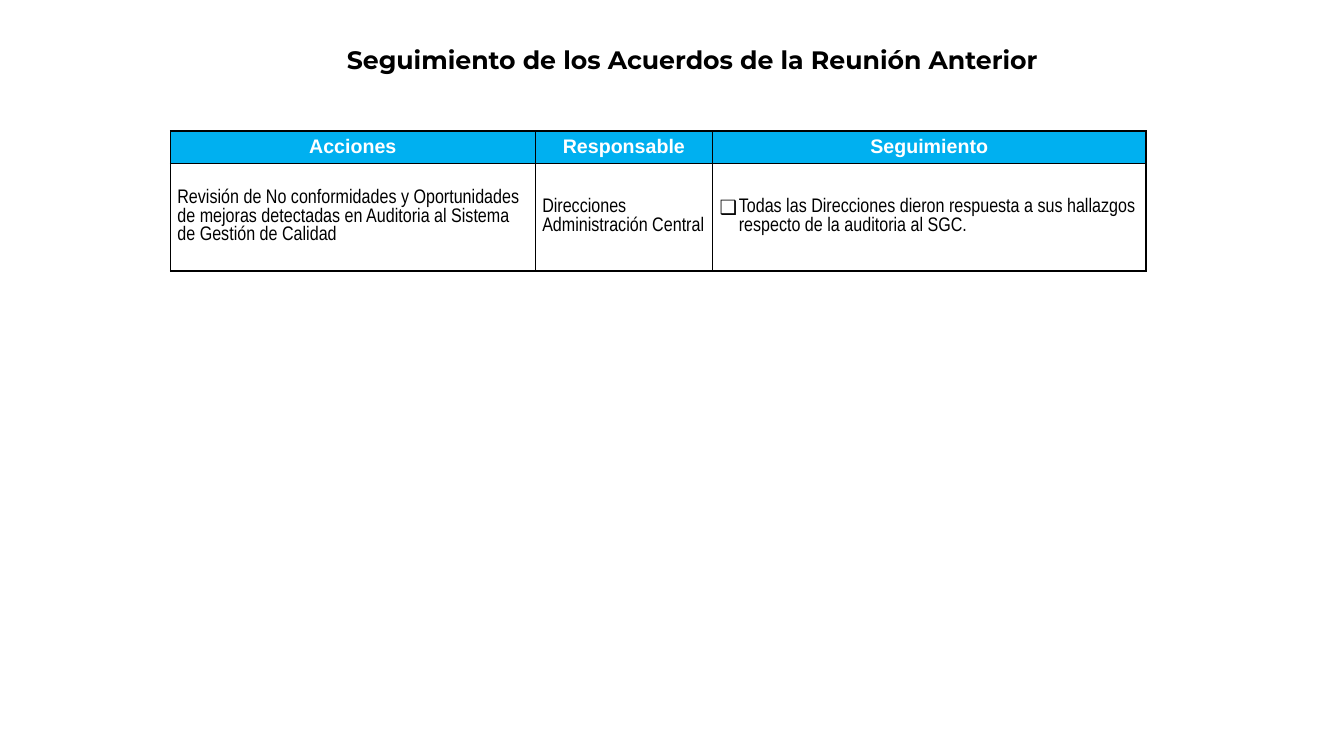
from lxml.etree import SubElement
from pptx import Presentation
from pptx.dml.color import RGBColor
from pptx.enum.text import MSO_ANCHOR, PP_ALIGN
from pptx.oxml.ns import qn
from pptx.util import Pt

COLORS = {"text": "000000", "line": "000000", "head": "00B0F0",
          "white": "FFFFFF"}
HEADS = ["Acciones", "Responsable", "Seguimiento"]
ROWS = [[
    "Revisión de No conformidades y Oportunidades de mejoras detectadas "
    "en Auditoria al Sistema de Gestión de Calidad",
    "Direcciones Administración Central",
    "Todas las Direcciones dieron respuesta a sus hallazgos respecto "
    "de la auditoria al SGC.",
]]
WIDTHS = [260.64, 126.72, 309.6]
HEIGHTS = [23.04, 77.04]


def rgb(name):
    return RGBColor.from_string(COLORS[name])


def add_bullet(para, char, indent):
    props = para._p.get_or_add_pPr()
    props.set("marL", str(Pt(indent)))
    props.set("indent", str(-Pt(indent)))
    tint = SubElement(props, qn("a:buClr"))
    SubElement(tint, qn("a:srgbClr"), val=COLORS["text"])
    SubElement(props, qn("a:buFont"), typeface="Arial")
    SubElement(props, qn("a:buChar"), char=char)


def put_text(frame, text, font="Arial", size=14, color="text", bold=False,
             align=PP_ALIGN.LEFT, bullet=None, after=0):
    frame.word_wrap = True
    para = frame.paragraphs[0]
    para.alignment = align
    para.space_after = Pt(after)
    if bullet:
        add_bullet(para, bullet, 13.68)
    run = para.add_run()
    run.text = text
    run.font.name = font
    run.font.size = Pt(size)
    run.font.bold = bold
    run.font.color.rgb = rgb(color)


def add_title(slide, text):
    box = slide.shapes.add_textbox(Pt(202.5), Pt(13), Pt(584), Pt(58.3))
    box.text_frame.vertical_anchor = MSO_ANCHOR.MIDDLE
    put_text(box.text_frame, text, font="Montserrat", size=18, bold=True,
             align=PP_ALIGN.CENTER)


def style_cell(cell, fill, inset):
    cell.margin_left = cell.margin_right = Pt(inset)
    cell.margin_top = cell.margin_bottom = Pt(0)
    cell.vertical_anchor = MSO_ANCHOR.MIDDLE
    # Borders go before the fill
    props = cell._tc.get_or_add_tcPr()
    for side in ("lnL", "lnR", "lnT", "lnB"):
        line = SubElement(props, qn(f"a:{side}"), w=str(Pt(1)))
        paint = SubElement(line, qn("a:solidFill"))
        SubElement(paint, qn("a:srgbClr"), val=COLORS["line"])
    cell.fill.solid()
    cell.fill.fore_color.rgb = rgb(fill)


def add_grid(slide):
    frame = slide.shapes.add_table(
        len(HEIGHTS), len(WIDTHS), Pt(121.68), Pt(93.6),
        Pt(sum(WIDTHS)), Pt(sum(HEIGHTS)))
    table = frame.table
    table.first_row = table.horz_banding = False
    for col, width in zip(table.columns, WIDTHS):
        col.width = Pt(width)
    for row, height in zip(table.rows, HEIGHTS):
        row.height = Pt(height)

    # Header row
    for col, text in enumerate(HEADS):
        cell = table.cell(0, col)
        style_cell(cell, "head", 2.16)
        put_text(cell.text_frame, text, color="white", bold=True,
                 align=PP_ALIGN.CENTER)

    # Body rows, with a check box in the last column
    for row, texts in enumerate(ROWS, 1):
        for col, text in enumerate(texts):
            cell = table.cell(row, col)
            style_cell(cell, "white", 5.04)
            last = col == len(texts) - 1
            put_text(cell.text_frame, text, font="Arial Narrow",
                     bullet="❑" if last else None, after=6 if last else 0)


def main():
    deck = Presentation()
    deck.slide_width, deck.slide_height = Pt(960), Pt(540)
    slide = deck.slides.add_slide(deck.slide_layouts[6])
    add_title(slide, "Seguimiento de los Acuerdos de la Reunión Anterior")
    add_grid(slide)
    deck.save("out.pptx")


if __name__ == "__main__":
    main()
